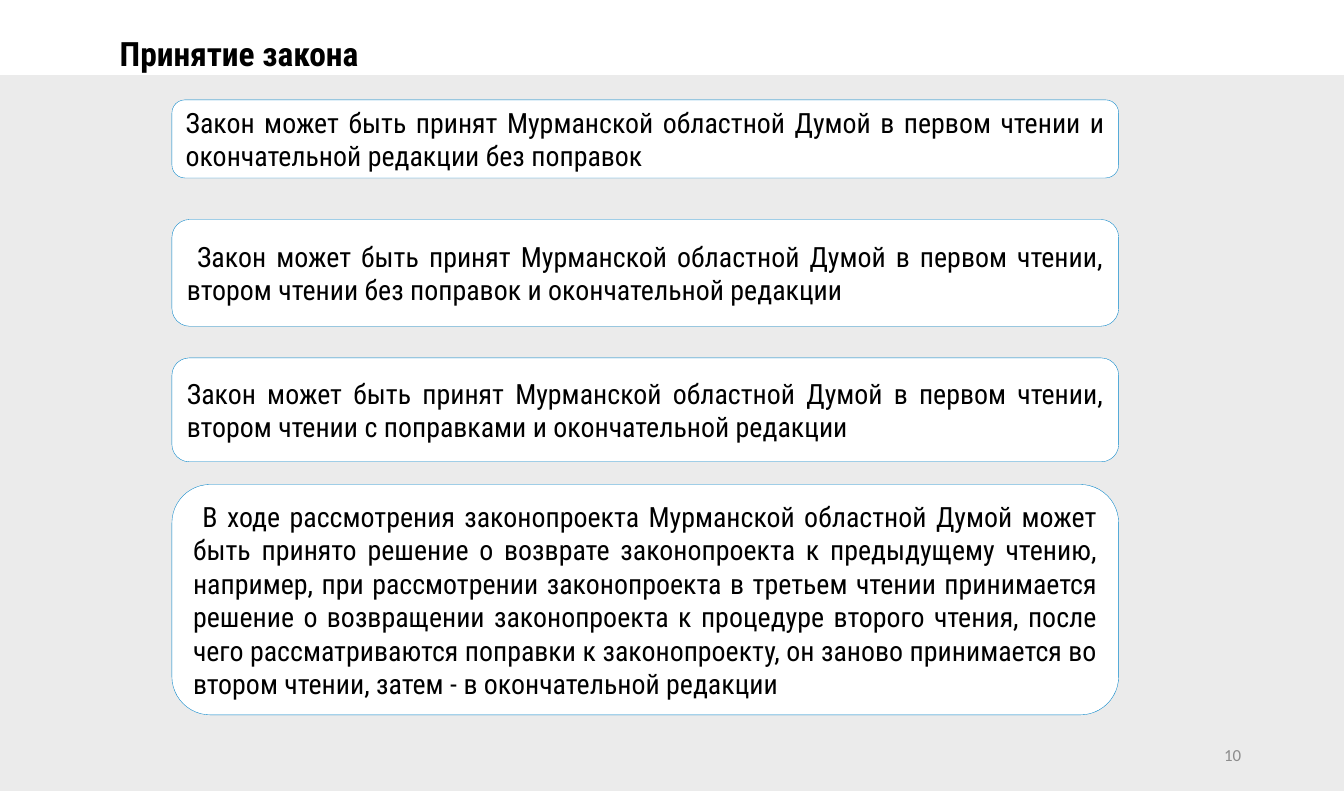
"""Build the slide on the ways a regional law can be adopted."""
from dataclasses import dataclass

from pptx import Presentation
from pptx import util as u
from pptx.dml.color import RGBColor
from pptx.enum import shapes, text

PX = 9000
SLIDE_WIDTH, SLIDE_HEIGHT = 1360, 800
FONT = "Roboto Condensed"
COLORS = {"paper": "FFFFFF", "backdrop": "EBEBEB", "border": "0082C8",
          "ink": "000000", "number": "8C8C8C"}
BACKDROP_TOP = 76
CARD_LEFT, CARD_WIDTH = 174, 958


@dataclass
class Card:
    top: int
    height: int
    words: str


CARDS = [
    Card(101, 79, "Закон может быть принят Мурманской областной Думой в первом чтении "
                  "и окончательной редакции без поправок"),
    Card(222, 108, " Закон может быть принят Мурманской областной Думой в первом чтении, "
                   "втором чтении без поправок и окончательной редакции"),
    Card(362, 105, "Закон может быть принят Мурманской областной Думой в первом чтении, "
                   "втором чтении с поправками и окончательной редакции"),
    Card(490, 233, " В ходе рассмотрения законопроекта Мурманской областной Думой может "
                   "быть принято решение о возврате законопроекта к предыдущему чтению, "
                   "например, при рассмотрении законопроекта в третьем чтении принимается "
                   "решение о возвращении законопроекта к процедуре второго чтения, после "
                   "чего рассматриваются поправки к законопроекту, он заново принимается во "
                   "втором чтении, затем - в окончательной редакции"),
]


def px(n: int) -> u.Emu:
    return u.Emu(n * PX)


def rgb(name: str) -> RGBColor:
    return RGBColor.from_string(COLORS[name])


def write(sp, words: str, size: float, align, anchor, font: str = FONT,
          color: str = "ink", bold: bool = False):
    tf = sp.text_frame
    tf.word_wrap = True
    tf.auto_size = text.MSO_AUTO_SIZE.NONE
    tf.vertical_anchor = anchor
    p = tf.paragraphs[0]
    p.alignment = align
    r = p.add_run()
    r.text = words
    r.font.name, r.font.size, r.font.bold = font, u.Pt(size), bold
    r.font.color.rgb = rgb(color)
    return p


def add_block(s, kind, left: int, top: int, width: int, height: int, fill: str):
    sp = s.shapes.add_shape(kind, px(left), px(top), px(width), px(height))
    sp.shadow.inherit = False
    sp.fill.solid()
    sp.fill.fore_color.rgb = rgb(fill)
    return sp


def add_card(s, card: Card) -> None:
    sp = add_block(s, shapes.MSO_SHAPE.ROUNDED_RECTANGLE, CARD_LEFT, card.top,
                   CARD_WIDTH, card.height, "paper")
    sp.line.color.rgb = rgb("border")
    sp.line.width = u.Pt(0.25)
    write(sp, card.words, 20, text.PP_ALIGN.JUSTIFY, text.MSO_ANCHOR.MIDDLE)


def add_title(s, words: str) -> None:
    sp = s.shapes.title
    sp.left, sp.top, sp.width, sp.height = px(41), px(28), px(1221), px(82)
    p = write(sp, words, 24, text.PP_ALIGN.LEFT, text.MSO_ANCHOR.TOP, bold=True)
    p._p.get_or_add_pPr().set("indent", str(px(70)))
    sp.element.getparent().append(sp.element)


def main() -> None:
    prs = Presentation()
    prs.slide_width, prs.slide_height = px(SLIDE_WIDTH), px(SLIDE_HEIGHT)
    s = prs.slides.add_slide(prs.slide_layouts[5])
    backdrop = add_block(s, shapes.MSO_SHAPE.RECTANGLE, 0, BACKDROP_TOP, SLIDE_WIDTH,
                         SLIDE_HEIGHT - BACKDROP_TOP, "backdrop")
    backdrop.line.fill.background()
    for card in CARDS:
        add_card(s, card)
    number = s.shapes.add_textbox(px(960), px(742), px(306), px(43))
    write(number, "10", 12.1, text.PP_ALIGN.RIGHT, text.MSO_ANCHOR.MIDDLE,
          "Calibri", "number")
    add_title(s, "Принятие закона")
    prs.save("out.pptx")


if __name__ == "__main__":
    main()
